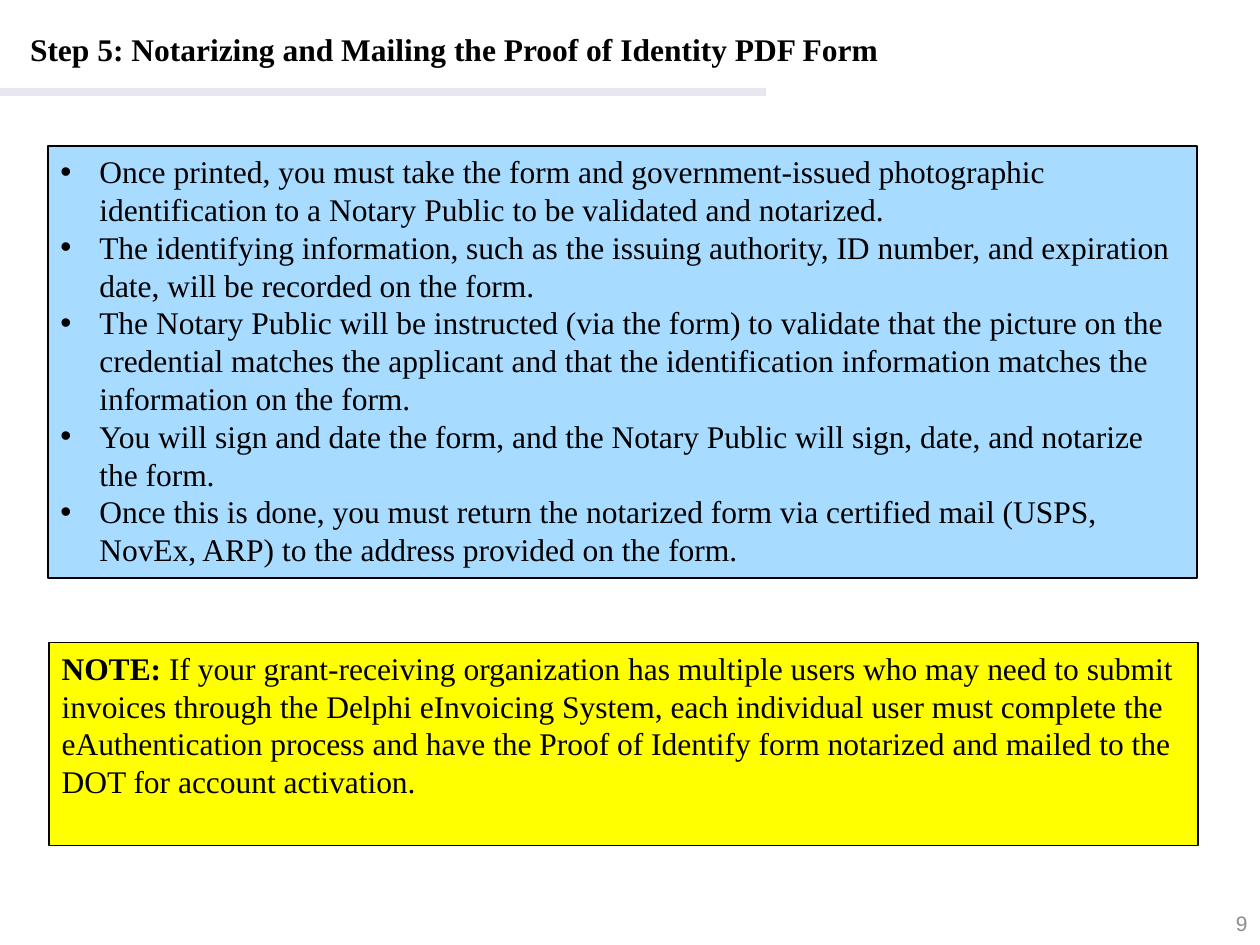
from lxml.etree import SubElement
from pptx import Presentation
from pptx.dml.color import RGBColor
from pptx.enum.shapes import MSO_CONNECTOR, MSO_SHAPE
from pptx.enum.text import MSO_ANCHOR, PP_ALIGN
from pptx.oxml.ns import qn
from pptx.util import Inches, Pt

BLACK = RGBColor(0x00, 0x00, 0x00)
GRAY = RGBColor(0x8C, 0x8C, 0x8C)
RULE = RGBColor(0xE7, 0xE8, 0xEF)
BLUE = RGBColor(0xA7, 0xDB, 0xFF)
YELLOW = RGBColor(0xFF, 0xFF, 0x00)

BODY = {"name": "Times New Roman", "size": Pt(18), "bold": False}
HEADING = {**BODY, "bold": True}
NUMBER = {"name": "Arial", "size": Pt(12)}

STEPS = [
    "Once printed, you must take the form and government-issued photographic "
    "identification to a Notary Public to be validated and notarized.",
    "The identifying information, such as the issuing authority, ID number, "
    "and expiration date, will be recorded on the form.",
    "The Notary Public will be instructed (via the form) to validate that the "
    "picture on the credential matches the applicant and that the identification "
    "information matches the information on the form.",
    "You will sign and date the form, and the Notary Public will sign, date, "
    "and notarize the form.",
    "Once this is done, you must return the notarized form via certified mail "
    "(USPS, NovEx, ARP) to the address provided on the form.",
]
NOTE = (
    "If your grant-receiving organization has multiple users who may need to "
    "submit invoices through the Delphi eInvoicing System, each individual user "
    "must complete the eAuthentication process and have the Proof of Identify "
    "form notarized and mailed to the DOT for account activation."
)


def add_run(paragraph, text, style, color=BLACK):
    run = paragraph.add_run()
    run.text = text
    for name, value in style.items():
        setattr(run.font, name, value)
    run.font.color.rgb = color


def add_bullet(paragraph):
    properties = paragraph._p.get_or_add_pPr()
    indent = Inches(0.31)
    properties.set("marL", str(indent))
    properties.set("indent", str(-indent))
    SubElement(properties, qn("a:buFont")).set("typeface", "Arial")
    SubElement(properties, qn("a:buChar")).set("char", "•")


def add_label(slide, position, text, style, color, alignment):
    """Add a single line of text, centred vertically in its box."""
    shape = slide.shapes.add_textbox(*map(Inches, position))
    frame = shape.text_frame
    frame.word_wrap = True
    frame.vertical_anchor = MSO_ANCHOR.MIDDLE
    paragraph = frame.paragraphs[0]
    paragraph.alignment = alignment
    add_run(paragraph, text, style, color)


def add_panel(slide, position, fill, paragraphs, bulleted=False):
    """Add an outlined box; each paragraph is a list of (text, style) runs."""
    shape = slide.shapes.add_shape(MSO_SHAPE.RECTANGLE, *map(Inches, position))
    shape.shadow.inherit = False
    shape.fill.solid()
    shape.fill.fore_color.rgb = fill
    shape.line.color.rgb = BLACK
    shape.line.width = Pt(1)
    frame = shape.text_frame
    frame.word_wrap = True
    frame.vertical_anchor = MSO_ANCHOR.TOP
    for index, runs in enumerate(paragraphs):
        paragraph = frame.add_paragraph() if index else frame.paragraphs[0]
        paragraph.alignment = PP_ALIGN.LEFT
        if bulleted:
            add_bullet(paragraph)
        for text, style in runs:
            add_run(paragraph, text, style)


def add_rule(slide, width, top):
    rule = slide.shapes.add_connector(
        MSO_CONNECTOR.STRAIGHT, 0, Inches(top), Inches(width), Inches(top)
    )
    rule.line.color.rgb = RULE
    rule.line.width = Pt(4.5)
    SubElement(rule._element.spPr, qn("a:effectLst"))


def main():
    presentation = Presentation()
    presentation.slide_width = Inches(10)
    presentation.slide_height = Inches(7.5)
    slide = presentation.slides.add_slide(presentation.slide_layouts[6])

    add_rule(slide, 6.08, 0.73)
    add_label(
        slide, (0.14, 0.17, 9.13, 0.43),
        "Step 5: Notarizing and Mailing the Proof of Identity PDF Form",
        HEADING, BLACK, PP_ALIGN.LEFT,
    )
    steps = [[(step, BODY)] for step in STEPS]
    add_panel(slide, (0.38, 1.16, 9.12, 3.43), BLUE, steps, bulleted=True)
    add_label(slide, (7.67, 7.13, 2.33, 0.4), "9", NUMBER, GRAY, PP_ALIGN.RIGHT)
    note = [("NOTE: ", HEADING), (NOTE, BODY)]
    add_panel(slide, (0.39, 5.1, 9.12, 1.61), YELLOW, [note])

    presentation.save("out.pptx")


if __name__ == "__main__":
    main()
